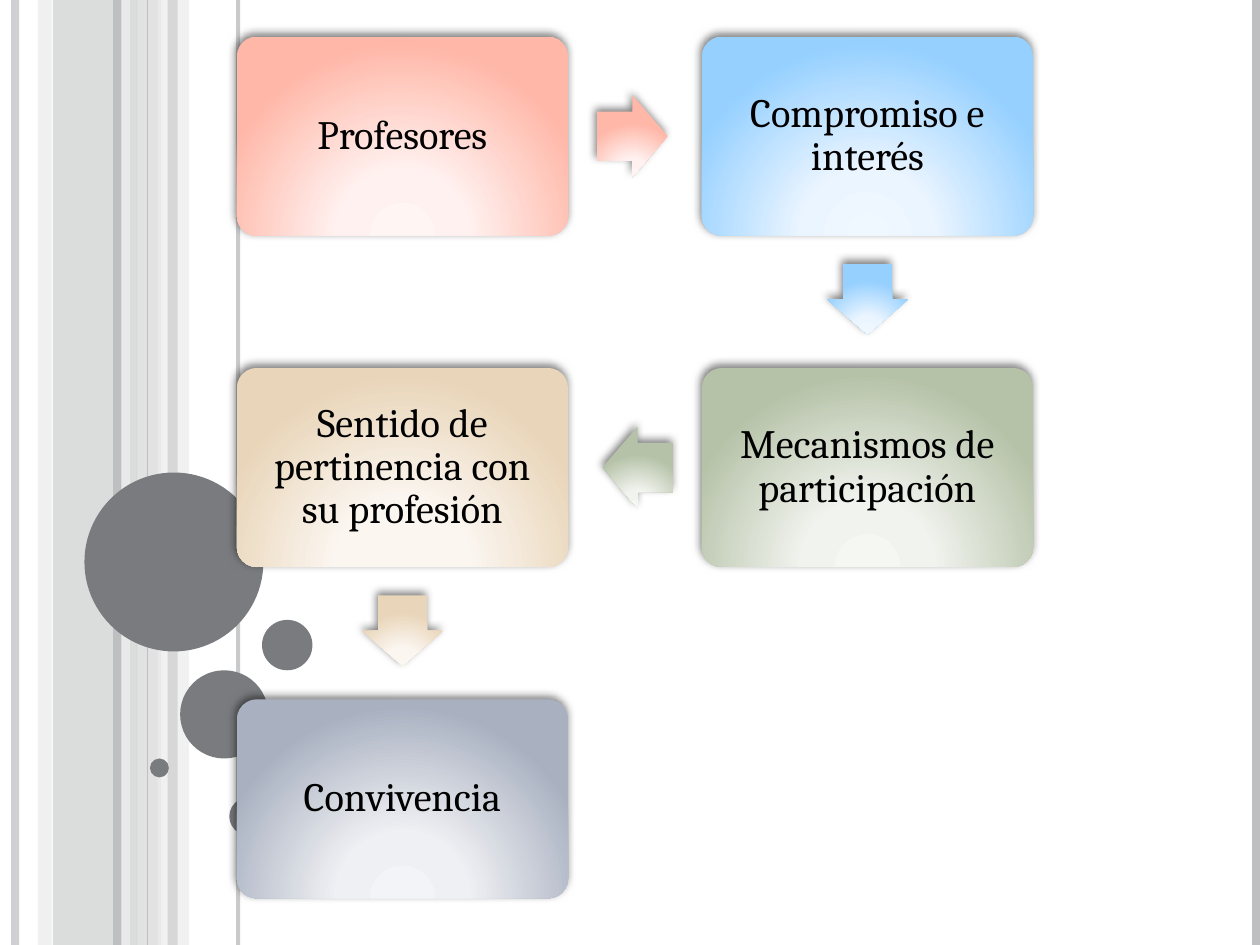
from lxml import etree
from pptx import Presentation
from pptx.dml.color import RGBColor
from pptx.enum.shapes import MSO_CONNECTOR, MSO_SHAPE
from pptx.enum.text import MSO_ANCHOR, PP_ALIGN
from pptx.oxml import parse_xml
from pptx.oxml.ns import nsdecls, qn
from pptx.util import Inches, Pt

WIDTH, HEIGHT = 10, 7.5
FONT = "Cambria"
BLACK = RGBColor(0x00, 0x00, 0x00)
GREY = RGBColor(0xBE, 0xBF, 0xC0)
LIGHT_GREY = RGBColor(0xD7, 0xD7, 0xD8)
PALE_GREY = RGBColor(0xEC, 0xEC, 0xEC)
DARK_GREY = RGBColor(0x79, 0x7B, 0x7E)

# Gradients run from the light centre to the full colour
CORAL = [RGBColor.from_string(c) for c in ("FFF5F3", "FFF1EF", "FFB7A8")]
BLUE = [RGBColor.from_string(c) for c in ("F0F8FF", "EBF5FF", "95D0FF")]
GREEN = [RGBColor.from_string(c) for c in ("F5F7F2", "F1F3EE", "B6C2A8")]
SAND = [RGBColor.from_string(c) for c in ("FDF9F3", "FBF6F0", "E9D5B9")]
SLATE = [RGBColor.from_string(c) for c in ("F3F4F7", "EFF0F3", "A9B1C1")]

# Stripes: left, width, colour, opacity in percent
STRIPES = [(0.42, 0.67, GREY, 54), (0.3, 0.11, LIGHT_GREY, 36),
           (1.08, 0.2, LIGHT_GREY, 70), (1.25, 0.25, PALE_GREY, 71)]
NARROW_STRIPE = (1.33, 0.08, GREY, 51)
# Rules: x, line width, colour, opacity in percent
RULES = [(0.12, 4.5, GREY, 73), (1, 4.5, PALE_GREY, 83), (0.93, 4.5, GREY, 100),
         (1.89, 2.25, GREY, 82), (1.17, 0.75, GREY, 100), (9.97, 4.5, GREY, 100)]
# Bubbles: left, top, diameter
BUBBLES = [(0.67, 3.75, 1.42), (1.43, 5.32, 0.7), (1.19, 6.02, 0.15),
           (1.82, 6.33, 0.3), (2.08, 4.92, 0.4)]

# Steps: text, column, row, gradient, direction to the next step
RIGHT, DOWN, LEFT = (1, 0, 0), (0, 1, 90), (-1, 0, 180)
STEPS = [("Profesores", 0, 0, CORAL, RIGHT),
         ("Compromiso e interés", 1, 0, BLUE, DOWN),
         ("Mecanismos de participación", 1, 1, GREEN, LEFT),
         ("Sentido de pertinencia con su profesión", 0, 1, SAND, DOWN),
         ("Convivencia", 0, 2, SLATE, None)]


def set_opacity(fill_owner, percent):
    """Add an alpha value to the solid colour found in an element."""
    if percent < 100:
        color = next(fill_owner.iter(qn("a:srgbClr")))
        etree.SubElement(color, qn("a:alpha")).set("val", str(percent * 1000))


def add_plain_shape(slide, kind, left, top, width, height, color, opacity=100):
    shape = slide.shapes.add_shape(kind, *map(Inches, (left, top, width, height)))
    shape.shadow.inherit = False
    shape.fill.solid()
    shape.fill.fore_color.rgb = color
    shape.line.fill.background()
    set_opacity(shape.fill._xPr, opacity)
    return shape


def add_rule(slide, x, top, height, width, color, opacity):
    rule = slide.shapes.add_connector(
        MSO_CONNECTOR.STRAIGHT, *map(Inches, (x, top, x, top + height)))
    rule.line.width = Pt(width)
    rule.line.color.rgb = color
    properties = rule._element.spPr
    set_opacity(properties, opacity)
    etree.SubElement(properties, qn("a:effectLst"))


def add_glow_shape(slide, kind, left, top, width, height, colors):
    """Shape lit from below by a radial gradient, with a soft shadow on top."""
    shape = add_plain_shape(slide, kind, left, top, width, height, colors[-1])
    stops = "".join(f'<a:gs pos="{position}"><a:srgbClr val="{color}"/></a:gs>'
                    for position, color in zip((0, 34000, 100000), colors))
    gradient = parse_xml(
        f'<a:gradFill {nsdecls("a")} rotWithShape="0"><a:gsLst>{stops}</a:gsLst>'
        '<a:path path="circle"><a:fillToRect l="50000" t="155000" r="50000" '
        'b="-55000"/></a:path></a:gradFill>')
    properties = shape._element.spPr
    properties.replace(properties.find(qn("a:solidFill")), gradient)
    properties.find(qn("a:effectLst")).append(parse_xml(
        f'<a:outerShdw {nsdecls("a")} blurRad="{Pt(5)}" dist="{Pt(2)}" '
        f'dir="{245 * 60000}" algn="tl" rotWithShape="0"><a:srgbClr val="000000">'
        '<a:alpha val="50000"/></a:srgbClr></a:outerShdw>'))
    return shape


def add_step(slide, left, top, width, height, text, colors):
    shape = add_glow_shape(slide, MSO_SHAPE.ROUNDED_RECTANGLE,
                           left, top, width, height, colors)
    shape.adjustments[0] = 0.1
    text_frame = shape.text_frame
    text_frame.text = text
    text_frame.word_wrap = True
    text_frame.vertical_anchor = MSO_ANCHOR.MIDDLE
    text_frame.margin_left = text_frame.margin_right = Inches(0.1)
    text_frame.margin_top = text_frame.margin_bottom = Inches(0.1)
    paragraph = text_frame.paragraphs[0]
    paragraph.alignment = PP_ALIGN.CENTER
    paragraph.line_spacing = 0.9
    font = paragraph.runs[0].font
    font.name, font.size, font.color.rgb = FONT, Pt(23), BLACK


def add_arrow(slide, center_x, center_y, rotation, colors):
    length, breadth = 0.56, 0.65
    arrow = add_glow_shape(slide, MSO_SHAPE.RIGHT_ARROW, center_x - length / 2,
                           center_y - breadth / 2, length, breadth, colors)
    arrow.adjustments[0], arrow.adjustments[1] = 0.6, 0.5
    arrow.rotation = rotation


def add_backdrop(slide, top, height):
    for left, width, color, opacity in STRIPES:
        add_plain_shape(slide, MSO_SHAPE.RECTANGLE, left, top, width, height,
                        color, opacity)
    for x, width, color, opacity in RULES:
        add_rule(slide, x, top, height, width, color, opacity)
    left, width, color, opacity = NARROW_STRIPE
    add_plain_shape(slide, MSO_SHAPE.RECTANGLE, left, top, width, height,
                    color, opacity)
    for left, bubble_top, size in BUBBLES:
        add_plain_shape(slide, MSO_SHAPE.OVAL, left, bubble_top, size, size,
                        DARK_GREY)


def add_flow(slide, left, top, width, height):
    """Snake of steps on two columns and three rows, arrows in the gaps."""
    step_width, step_height = width * 0.416, height * 0.231
    column_pitch = width - step_width
    row_pitch = (height - step_height) / 2
    setback = 0.02  # arrows sit slightly nearer the step they leave
    for text, column, row, colors, direction in STEPS:
        x, y = left + column * column_pitch, top + row * row_pitch
        add_step(slide, x, y, step_width, step_height, text, colors)
        if direction:
            across, down, rotation = direction
            add_arrow(slide,
                      x + step_width / 2 + across * (column_pitch / 2 - setback),
                      y + step_height / 2 + down * (row_pitch / 2 - setback),
                      rotation, colors)


def main():
    presentation = Presentation()
    presentation.slide_width, presentation.slide_height = Inches(WIDTH), Inches(HEIGHT)
    slide = presentation.slides.add_slide(presentation.slide_layouts[6])
    add_backdrop(slide, 0, HEIGHT)
    add_flow(slide, 1.88, 0.29, 6.32, 6.84)
    presentation.save("out.pptx")


if __name__ == "__main__":
    main()
